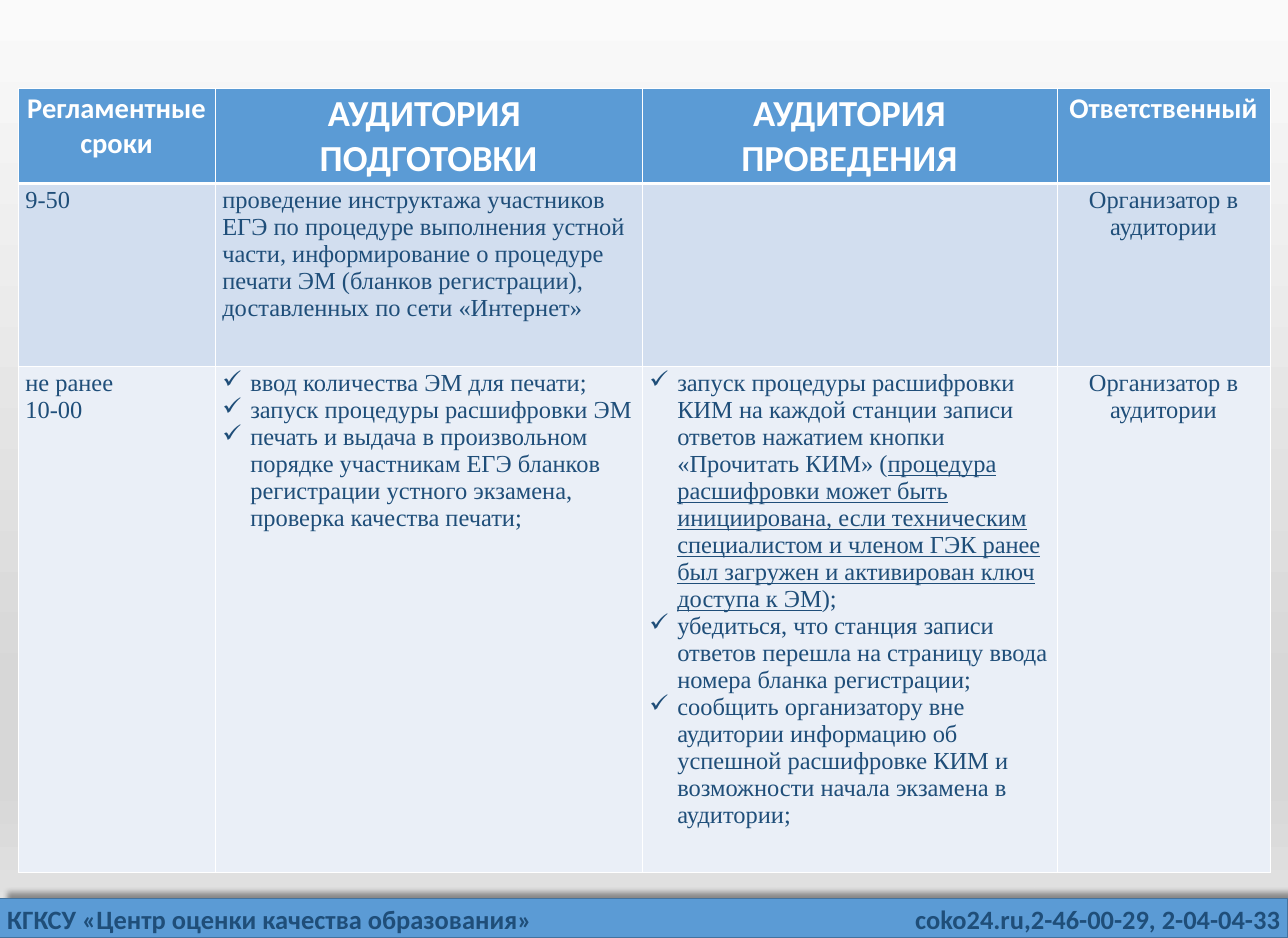
from copy import deepcopy
from dataclasses import dataclass

from lxml import etree
from pptx import Presentation
from pptx import util as u
from pptx.dml.color import RGBColor
from pptx.enum import shapes, text
from pptx.oxml import ns

PX = 914400 / 73.3
WIDTH, HEIGHT = 1288, 938


@dataclass(frozen=True)
class Theme:
    accent: str = "5B9BD5"
    accent_line: str = "43739E"
    ink: str = "1F4E79"
    white: str = "FFFFFF"
    bands: tuple = ("D2DEEF", "EAEFF7")
    backdrop: tuple = ((0, "FAFAFA"), (0.74, "D7D7D7"), (0.83, "D7D7D7"), (1, "E4E4E4"))
    head_font: str = "Calibri"
    body_font: str = "Times New Roman"
    title_size: int = 36
    head_size: int = 28
    footer_size: int = 26
    body_size: int = 24


THEME = Theme()
LEFT, CENTER, RIGHT = text.PP_ALIGN.LEFT, text.PP_ALIGN.CENTER, text.PP_ALIGN.RIGHT

COLUMNS = (197, 427, 415, 213)
ROWS = (95, 183, 506)

# Each cell is a list of paragraphs
HEADINGS = [
    (["Регламентные сроки"], THEME.head_size),
    (["АУДИТОРИЯ ", "ПОДГОТОВКИ"], THEME.title_size),
    (["АУДИТОРИЯ ПРОВЕДЕНИЯ"], THEME.title_size),
    (["Ответственный"], THEME.head_size),
]
ORGANIZER = ["Организатор в аудитории"]
# A paragraph given as a tuple alternates plain and underlined runs
STAGES = [
    [
        ["9-50"],
        ["проведение инструктажа участников ЕГЭ по процедуре выполнения устной части, "
         "информирование о процедуре печати ЭМ (бланков регистрации), "
         "доставленных по сети «Интернет»"],
        [],
        ORGANIZER,
    ],
    [
        ["не ранее", "10-00"],
        ["ввод количества ЭМ для печати;",
         "запуск процедуры расшифровки ЭМ",
         "печать и выдача в произвольном порядке участникам ЕГЭ бланков "
         "регистрации устного экзамена, проверка качества печати;"],
        [("запуск процедуры расшифровки КИМ на каждой станции записи ответов "
          "нажатием кнопки «Прочитать КИМ» (",
          "процедура расшифровки может быть инициирована, если техническим "
          "специалистом и членом ГЭК ранее был загружен и активирован ключ доступа к ЭМ",
          ");"),
         "убедиться, что станция записи ответов перешла на страницу ввода "
         "номера бланка регистрации;",
         "сообщить организатору вне аудитории информацию об успешной "
         "расшифровке КИМ и возможности начала экзамена в аудитории;"],
        ORGANIZER,
    ],
]


def px(length):
    return u.Emu(round(length * PX))


def rgb(color):
    return RGBColor.from_string(color)


def add_xml(parent, tag, **attributes):
    return etree.SubElement(parent, ns.qn(tag), attributes)


def add_bullet(paragraph):
    properties = paragraph._p.get_or_add_pPr()
    properties.set("marL", str(px(28)))
    properties.set("indent", str(-px(28)))
    add_xml(properties, "a:buChar", char="✓")


def write(frame, paragraphs, font, size, color, bold=False, align=LEFT, bullets=False):
    for index, content in enumerate(paragraphs):
        paragraph = frame.add_paragraph() if index else frame.paragraphs[0]
        paragraph.alignment = align
        if bullets:
            add_bullet(paragraph)
        runs = (content,) if isinstance(content, str) else content
        for position, words in enumerate(runs):
            run = paragraph.add_run()
            run.text = words
            run.font.name, run.font.size = font, u.Pt(size)
            run.font.bold = bold
            run.font.color.rgb = rgb(color)
            if position % 2:
                run.font.underline = True


def paint_backdrop(slide):
    fill = slide.background.fill
    fill.gradient()
    fill.gradient_angle = 270
    stop_list = next(slide.element.iter(ns.qn("a:gsLst")))
    for stop in list(stop_list):
        stop_list.append(deepcopy(stop))
    for stop, (position, color) in zip(fill.gradient_stops, THEME.backdrop):
        stop.position = position
        stop.color.rgb = rgb(color)


def style_cell(cell, color, heading=False):
    properties = cell._tc.get_or_add_tcPr()
    for side in ("L", "R", "T", "B"):
        width = 3 if heading and side == "B" else 1
        line = add_xml(properties, f"a:ln{side}", w=str(u.Pt(width)))
        add_xml(add_xml(line, "a:solidFill"), "a:srgbClr", val=THEME.white)
    cell.fill.solid()
    cell.fill.fore_color.rgb = rgb(color)


def add_schedule(slide, left, top):
    table = slide.shapes.add_table(len(ROWS), len(COLUMNS), px(left), px(top),
                                   px(sum(COLUMNS)), px(sum(ROWS))).table
    for column, width in zip(table.columns, COLUMNS):
        column.width = px(width)
    for row, height in zip(table.rows, ROWS):
        row.height = px(height)

    # Heading row
    for column, (lines, size) in enumerate(HEADINGS):
        cell = table.cell(0, column)
        style_cell(cell, THEME.accent, heading=True)
        write(cell.text_frame, lines, THEME.head_font, size, THEME.white, True, CENTER)

    # Stage rows
    for row, (stage, band) in enumerate(zip(STAGES, THEME.bands), 1):
        for column, lines in enumerate(stage):
            cell = table.cell(row, column)
            style_cell(cell, band)
            write(cell.text_frame, lines, THEME.body_font, THEME.body_size, THEME.ink,
                  align=CENTER if column == 3 else LEFT,
                  bullets=row == 2 and column in (1, 2))


def add_footer(slide, left, top, width, height):
    bar = slide.shapes.add_shape(shapes.MSO_SHAPE.RECTANGLE,
                                 px(left), px(top), px(width), px(height))
    bar.fill.solid()
    bar.fill.fore_color.rgb = rgb(THEME.accent)
    bar.line.color.rgb = rgb(THEME.accent_line)
    bar.line.width = u.Pt(1)

    # Shadow cast up and to the right
    bar.shadow.inherit = False
    effects = bar._element.spPr.find(ns.qn("a:effectLst"))
    shadow = add_xml(effects, "a:outerShdw", blurRad=str(u.Pt(4)), dist=str(u.Pt(10)),
                     dir=str(315 * 60000), algn="bl", rotWithShape="0")
    add_xml(add_xml(shadow, "a:srgbClr", val="000000"), "a:alpha", val="40000")

    # Organisation on the left, contacts on the right
    labels = (("КГКСУ «Центр оценки качества образования»", 545, LEFT),
              ("coko24.ru,2-46-00-29, 2-04-04-33", 383, RIGHT))
    for words, label_width, align in labels:
        start = left if align == LEFT else left + width - label_width
        label = slide.shapes.add_textbox(px(start), px(top), px(label_width), px(height))
        label.text_frame.word_wrap = False
        write(label.text_frame, [words], THEME.head_font, THEME.footer_size, THEME.ink,
              True, align)


def main():
    presentation = Presentation()
    presentation.slide_width, presentation.slide_height = px(WIDTH), px(HEIGHT)
    slide = presentation.slides.add_slide(presentation.slide_layouts.get_by_name("Blank"))
    paint_backdrop(slide)
    add_footer(slide, 0, 899, WIDTH, 39)
    add_schedule(slide, 18, 88)
    presentation.save("out.pptx")


if __name__ == "__main__":
    main()
